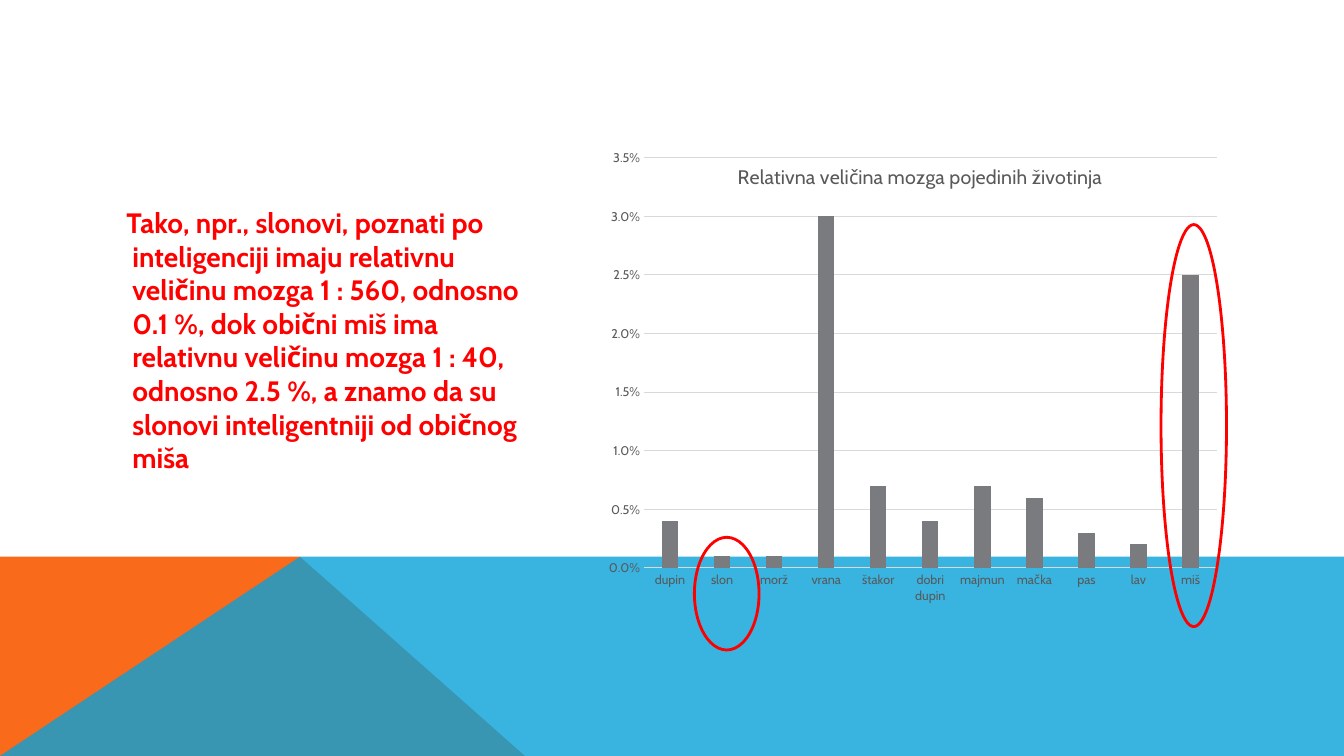
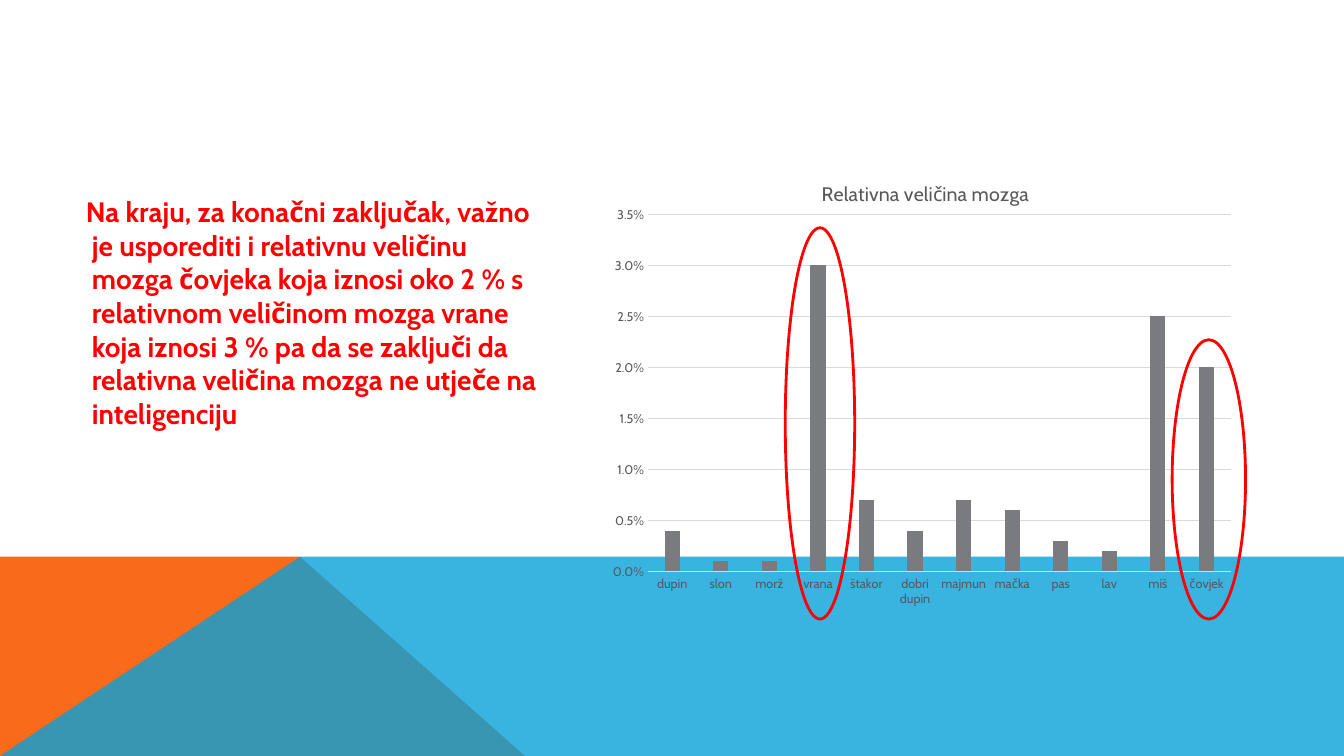
from pptx import Presentation
from pptx import util as u
from pptx import oxml
from pptx.chart.data import CategoryChartData
from pptx.dml.color import RGBColor
from pptx.enum import chart as ch, shapes, text
from pptx.oxml import ns

FONT = "Cabin"
RED, GREY, RULE, BAR = "FF0000", "595959", "D9D9D9", "797B7E"
WIDE, HIGH, BAND = 33.87, 19.05, 14.03
ANIMALS = {
    "dupin": 0.004, "slon": 0.001, "morž": 0.001, "vrana": 0.03,
    "štakor": 0.007, "dobri dupin": 0.004, "majmun": 0.007,
    "mačka": 0.006, "pas": 0.003, "lav": 0.002, "miš": 0.025,
}
SLIDES = [
    dict(
        words="Tako, npr., slonovi, poznati po inteligenciji imaju relativnu "
              "veličinu mozga 1 : 560, odnosno 0.1 %, dok obični miš ima "
              "relativnu veličinu mozga 1 : 40, odnosno 2.5 %, a znamo da su "
              "slonovi inteligentniji od običnog miša",
        body=(2.11, 5.05, 11.91, 13.18),
        title="Relativna veličina mozga pojedinih životinja",
        data=ANIMALS,
        box=(15.19, 3.63, 16, 12.75),
        plot=(0.065, 0.027, 0.902, 0.811),
        rings=[(2.31, 9.91, 1.63, 2.84), (14.07, 2.03, 1.65, 10.13)],
    ),
    dict(
        words="Na kraju, za konačni zaključak, važno je usporediti i "
              "relativnu veličinu mozga čovjeka koja iznosi oko 2 % s "
              "relativnom veličinom mozga vrane koja iznosi 3 % pa da se "
              "zaključi da relativna veličina mozga ne utječe na inteligenciju",
        body=(1.09, 4.78, 13.11, 12.32),
        title="Relativna veličina mozga",
        data={**ANIMALS, "čovjek": 0.02},
        box=(15.21, 4.09, 16.23, 11.51),
        plot=(0.069, 0.114, 0.905, 0.782),
        rings=[(4.58, 1.65, 1.75, 9.86), (14.33, 4.47, 1.85, 7.04)],
    ),
]


def rgb(code):
    """Turn a hex string into a colour."""
    return RGBColor.from_string(code)


def cm(box):
    """Turn a tuple of centimetres into lengths."""
    return [u.Cm(side) for side in box]


def style(font, size, color, bold=False):
    """Set the face, size, colour and weight of a font."""
    font.name, font.size, font.bold = FONT, u.Pt(size), bold
    font.color.rgb = rgb(color)


def add_bands(slide, layout):
    """Draw the lower bands and move them to the shared layout."""
    bands = [
        ([(0, HIGH), (0, BAND), (7.56, BAND), (13.23, HIGH)], "F96A1B", 100),
        ([(0, HIGH), (7.56, BAND), (WIDE, BAND), (WIDE, HIGH)], "08A1D9", 80),
    ]
    for num, (points, color, alpha) in enumerate(bands, 50):
        first, *rest = [cm(point) for point in points]
        pen = slide.shapes.build_freeform(*first)
        pen.add_line_segments(rest, close=True)
        band = pen.convert_to_shape()
        band.shadow.inherit = False
        band.line.fill.background()
        band.fill.solid()
        band.fill.fore_color.rgb = rgb(color)
        tint = band.element.xpath(".//a:solidFill/a:srgbClr")[0]
        oxml.xmlchemy.OxmlElement("a:alpha")
        clear = oxml.xmlchemy.OxmlElement("a:alpha")
        clear.set("val", str(alpha * 1000))
        tint.append(clear)
        band.element.xpath(".//p:cNvPr")[0].set("id", str(num))
        layout.shapes.element.append(band.element)


def add_body(slide, words, box):
    """Fill the body placeholder with one red paragraph."""
    body = slide.placeholders[1]
    body.left, body.top, body.width, body.height = cm(box)
    frame = body.text_frame
    frame.text = words
    frame.auto_size = text.MSO_AUTO_SIZE.NONE
    frame.vertical_anchor = text.MSO_ANCHOR.TOP
    para = frame.paragraphs[0]
    para.space_before = u.Pt(8)
    style(para.font, 20, RED, True)
    props = para._p.get_or_add_pPr()
    props.set("marL", str(u.Cm(0.97)))
    props.set("indent", str(u.Cm(-0.15)))
    props.insert_element_before(
        oxml.xmlchemy.OxmlElement("a:buNone"), "a:tabLst", "a:defRPr")


def set_plot(chart, plot):
    """Fix the inner plot area as fractions of the chart."""
    area = chart.element.xpath(".//c:plotArea")[0]
    for old in area.xpath("./c:layout"):
        area.remove(old)
    parts = [("layoutTarget", "inner"), ("xMode", "edge"), ("yMode", "edge")]
    parts += zip("xywh", plot)
    inner = "".join(f'<c:{tag} val="{val}"/>' for tag, val in parts)
    area.insert(0, oxml.parse_xml(
        f'<c:layout {ns.nsdecls("c")}><c:manualLayout>{inner}'
        "</c:manualLayout></c:layout>"))


def add_graph(slide, title, data, box, plot):
    """Draw the column chart of brain sizes."""
    table = CategoryChartData(number_format="0.0%")
    table.categories = list(data)
    table.add_series("Series 1", list(data.values()))
    chart = slide.shapes.add_chart(
        ch.XL_CHART_TYPE.COLUMN_CLUSTERED, *cm(box), table).chart
    style(chart.font, 10, "000000")
    chart.has_legend = False
    chart.has_title = True
    head = chart.chart_title.text_frame
    head.text = title
    style(head.paragraphs[0].font, 14, GREY)
    bars = chart.plots[0]
    bars.gap_width, bars.overlap, bars.vary_by_categories = 219, -27, False
    fill = bars.series[0].format.fill
    fill.solid()
    fill.fore_color.rgb = rgb(BAR)
    cats, vals = chart.category_axis, chart.value_axis
    for axis in (cats, vals):
        axis.major_tick_mark = axis.minor_tick_mark = ch.XL_TICK_MARK.NONE
        style(axis.tick_labels.font, 9, GREY)
    vals.has_major_gridlines = True
    for line in (cats.format.line, vals.major_gridlines.format.line):
        line.color.rgb, line.width = rgb(RULE), u.Pt(0.75)
    vals.format.line.fill.background()
    vals.minimum_scale, vals.maximum_scale, vals.major_unit = 0, 0.035, 0.005
    vals.tick_labels.number_format = "0.0%"
    vals.tick_labels.number_format_is_linked = False
    set_plot(chart, plot)


def add_rings(slide, box, rings):
    """Circle the chosen bars, measured from the chart's corner."""
    for left, top, wide, high in rings:
        place = cm((box[0] + left, box[1] + top, wide, high))
        ring = slide.shapes.add_shape(shapes.MSO_SHAPE.OVAL, *place)
        ring.shadow.inherit = False
        ring.fill.background()
        ring.line.color.rgb, ring.line.width = rgb(RED), u.Pt(2)


def add_page(slide, words, body, title, data, box, plot, rings):
    """Build one slide of text beside a chart."""
    head = slide.shapes.title.element
    head.getparent().remove(head)
    add_body(slide, words, body)
    add_graph(slide, title, data, box, plot)
    add_rings(slide, box, rings)


def main():
    """Build and save the slides."""
    deck = Presentation()
    deck.slide_width, deck.slide_height = cm((WIDE, HIGH))
    layout = deck.slide_layouts[1]
    pages = [deck.slides.add_slide(layout) for _ in SLIDES]
    add_bands(pages[0], layout)
    for page, parts in zip(pages, SLIDES):
        add_page(page, **parts)
    deck.save("out.pptx")


if __name__ == "__main__":
    main()
